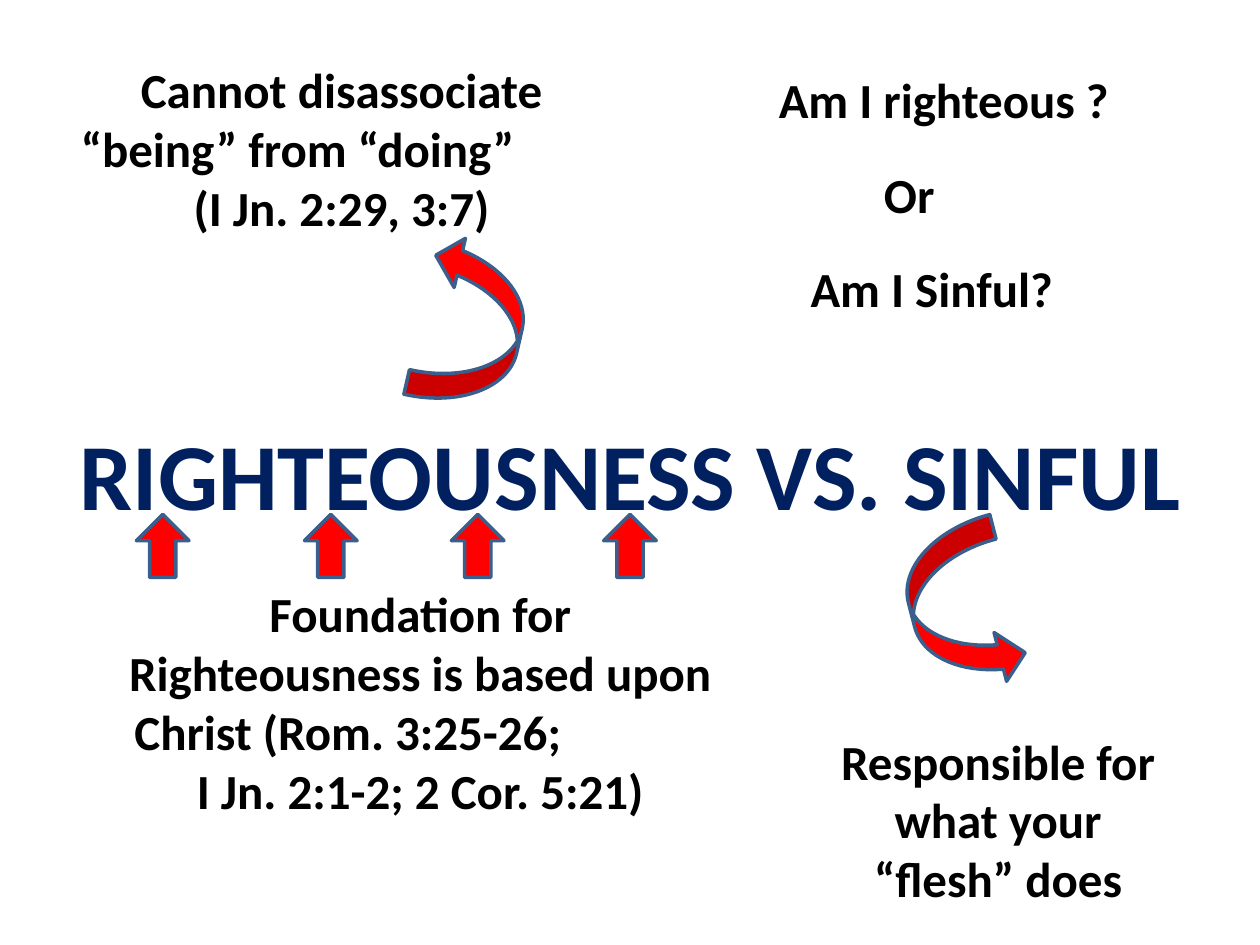
from dataclasses import dataclass

from pptx import Presentation
from pptx.dml.color import RGBColor
from pptx.enum.shapes import MSO_SHAPE
from pptx.enum.text import MSO_ANCHOR, MSO_AUTO_SIZE, PP_ALIGN
from pptx.util import Cm, Pt

FRAME_FORMAT = {
    "auto_size": MSO_AUTO_SIZE.SHAPE_TO_FIT_TEXT,
    "vertical_anchor": MSO_ANCHOR.TOP,
    "margin_left": Cm(0.25),
    "margin_right": Cm(0.25),
    "margin_top": Cm(0.13),
    "margin_bottom": Cm(0.13),
}


@dataclass
class Line:
    text: str
    align: PP_ALIGN = PP_ALIGN.CENTER
    indent: float = 0


@dataclass
class Note:
    left: float
    top: float
    width: float
    height: float
    lines: list[Line]


@dataclass
class Arrow:
    kind: MSO_SHAPE
    left: float
    top: float
    width: float
    height: float
    rotation: float = 0


def color(value: str) -> RGBColor:
    return RGBColor.from_string(value)


def apply_format(target, values: dict) -> None:
    for name, value in values.items():
        setattr(target, name, value)


def write_lines(box, lines: list[Line], size: float, ink: str, wrap: bool) -> None:
    frame = box.text_frame
    apply_format(frame, FRAME_FORMAT | {"word_wrap": wrap})
    for index, line in enumerate(lines):
        para = frame.add_paragraph() if index else frame.paragraphs[0]
        para.alignment = line.align
        if line.indent:
            para._p.get_or_add_pPr().set("marL", str(int(Cm(line.indent))))
        span = para.add_run()
        span.text = line.text
        apply_format(span.font, {"name": "Calibri", "size": Pt(size), "bold": True})
        span.font.color.rgb = color(ink)


def add_note(page, note: Note) -> None:
    box = page.shapes.add_textbox(
        Cm(note.left), Cm(note.top), Cm(note.width), Cm(note.height)
    )
    write_lines(box, note.lines, 28, "000000", True)


def add_arrow(page, arrow: Arrow) -> None:
    shape = page.shapes.add_shape(
        arrow.kind, Cm(arrow.left), Cm(arrow.top), Cm(arrow.width), Cm(arrow.height)
    )
    shape.rotation = arrow.rotation
    shape.shadow.inherit = False
    shape.fill.solid()
    shape.fill.fore_color.rgb = color("FF0000")
    shape.line.color.rgb = color("3A5F8C")
    shape.line.width = Pt(2)


def add_title(page) -> None:
    title = page.shapes.title
    place = {"left": Cm(1.24), "top": Cm(8.26), "width": Cm(22.94), "height": Cm(2.57)}
    apply_format(title, place)
    write_lines(title, [Line("RIGHTEOUSNESS VS. SINFUL")], 54, "002060", False)


NOTES = [
    Note(1.07, 1.07, 11.63, 3.84, [
        Line("Cannot disassociate"),
        Line("“being” from “doing”", PP_ALIGN.LEFT, 0.31),
        Line("(I Jn. 2:29, 3:7)"),
    ]),
    Note(16.31, 14.61, 7.62, 3.84, [Line("Responsible for what your “flesh” does")]),
    Note(2.33, 11.64, 12.28, 5.05, [
        Line("Foundation for Righteousness is based upon"),
        Line("Christ (Rom. 3:25-26;", PP_ALIGN.LEFT, 0.13),
        Line("I Jn. 2:1-2; 2 Cor. 5:21)"),
    ]),
    Note(15.45, 1.27, 7.83, 1.45, [Line("Am I righteous ?", PP_ALIGN.LEFT)]),
    Note(17.57, 3.18, 1.7, 1.45, [Line("Or", PP_ALIGN.LEFT)]),
    Note(16.09, 5.08, 5.93, 1.45, [Line("Am I Sinful?", PP_ALIGN.LEFT)]),
]

ARROWS = [
    Arrow(MSO_SHAPE.CURVED_UP_ARROW, 7.82, 5.51, 3.38, 2.03, 282.9),
    Arrow(MSO_SHAPE.CURVED_UP_ARROW, 17.7, 11.25, 3.38, 2.03, 75.6),
] + [
    Arrow(MSO_SHAPE.UP_ARROW, left, 10.37, 1.06, 1.27)
    for left in (2.75, 6.14, 9.1, 12.17)
]


def main() -> None:
    deck = Presentation()
    apply_format(deck, {"slide_width": Cm(25.4), "slide_height": Cm(19.05)})
    page = deck.slides.add_slide(deck.slide_layouts[5])
    add_title(page)
    for arrow in ARROWS:
        add_arrow(page, arrow)
    for note in NOTES:
        add_note(page, note)
    deck.save("out.pptx")


if __name__ == "__main__":
    main()
